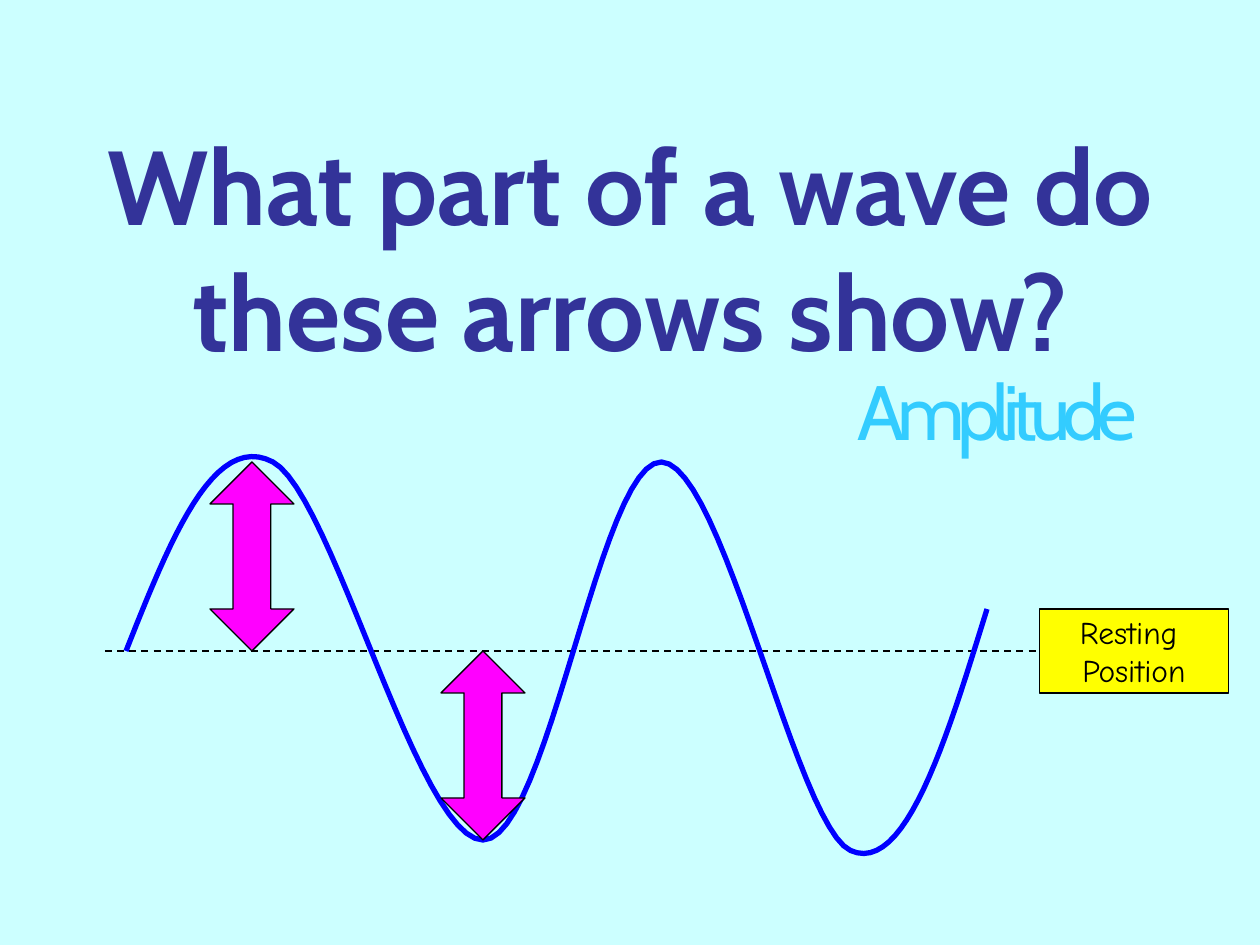
from dataclasses import dataclass, field

from lxml import etree
from pptx import Presentation
from pptx.dml.color import RGBColor
from pptx.enum.dml import MSO_LINE
from pptx.enum.shapes import MSO_CONNECTOR, MSO_SHAPE
from pptx.enum.text import MSO_ANCHOR, PP_ALIGN
from pptx.oxml.ns import qn
from pptx.util import Emu, Inches, Pt

RECTANGLE, UP_DOWN_ARROW = MSO_SHAPE.RECTANGLE, MSO_SHAPE.UP_DOWN_ARROW
STRAIGHT, DASH = MSO_CONNECTOR.STRAIGHT, MSO_LINE.DASH
TOP, MIDDLE, CENTER = MSO_ANCHOR.TOP, MSO_ANCHOR.MIDDLE, PP_ALIGN.CENTER

# The slide is a grid of 60 columns by 45 rows
COLUMNS, ROWS = 60, 45
SLIDE_WIDTH, SLIDE_HEIGHT = Inches(10), Inches(7.5)
REST_ROW = 31
CURVE_STEPS = 24
Point = tuple[float, float]


@dataclass
class Box:
    column: float
    row: float
    columns: float
    rows: float

    def place(self) -> tuple[Emu, Emu, Emu, Emu]:
        return x(self.column), y(self.row), x(self.columns), y(self.rows)


@dataclass
class Label:
    lines: list[str]
    font: dict
    color: str
    frame: dict = field(default_factory=dict)


TITLE = Label(["What part of a wave do these arrows show?"],
              {"name": "Cabin", "size": Pt(60), "bold": True}, "333399",
              {"word_wrap": True, "vertical_anchor": MIDDLE})
ANSWER = Label(["Amplitude"], {"name": "Cabin", "size": Pt(44)}, "33CCFF",
               {"word_wrap": False, "vertical_anchor": TOP})
REST = Label(["Resting ", "Position"], {"name": "Comic Neue", "size": Pt(18)},
             "000000", {"word_wrap": False, "vertical_anchor": MIDDLE})

WAVE_KNOTS = [(6, REST_ROW), (13, 22), (23, 40), (31.5, 22), (40.5, 40.5), (47, 29)]
AMPLITUDE_ARROWS = [Box(10, REST_ROW - 9, 4, 9), Box(21, REST_ROW, 4, 9)]


def x(columns: float) -> Emu:
    return Emu(round(SLIDE_WIDTH * columns / COLUMNS))


def y(rows: float) -> Emu:
    return Emu(round(SLIDE_HEIGHT * rows / ROWS))


def rgb(color: str) -> RGBColor:
    return RGBColor.from_string(color)


def paint(target, color: str) -> None:
    target.solid()
    target.fore_color.rgb = rgb(color)


def draw_outline(line, color: str, width: float) -> None:
    paint(line.fill, color)
    line.width = Pt(width)


def write(shape, label: Label) -> None:
    frame = shape.text_frame
    for name, value in label.frame.items():
        setattr(frame, name, value)
    frame.text = "\n".join(label.lines)
    for paragraph in frame.paragraphs:
        paragraph.alignment = CENTER
        font = paragraph.runs[0].font
        for name, value in label.font.items():
            setattr(font, name, value)
        font.color.rgb = rgb(label.color)


def add_text(slide, box: Box, label: Label):
    text = slide.shapes.add_textbox(*box.place())
    write(text, label)
    return text


def add_block(slide, kind, box: Box, fill: str):
    block = slide.shapes.add_shape(kind, *box.place())
    block.shadow.inherit = False
    paint(block.fill, fill)
    draw_outline(block.line, "000000", 0.75)
    return block


def add_rest_line(slide, start: float, end: float) -> None:
    line = slide.shapes.add_connector(STRAIGHT, x(start), y(REST_ROW), x(end), y(REST_ROW))
    draw_outline(line.line, "000000", 1)
    line.line.dash_style = DASH
    etree.SubElement(line._element.spPr, qn("a:effectLst"))


def midpoint(a: Point, b: Point) -> Point:
    return (a[0] + b[0]) / 2, (a[1] + b[1]) / 2


def wave_points(knots: list[Point]) -> list[Point]:
    """Smooth curve whose tangent at a knot is parallel to its neighbours' chord."""
    tangents = [((c[0] - a[0]) / 6, (c[1] - a[1]) / 6) for a, c in zip(knots, knots[2:])]
    inner = knots[1:-1]
    arriving = [(k[0] - t[0], k[1] - t[1]) for k, t in zip(inner, tangents)]
    leaving = [(k[0] + t[0], k[1] + t[1]) for k, t in zip(inner, tangents)]
    leaving.insert(0, midpoint(knots[0], arriving[0]))
    arriving.append(midpoint(leaving[-1], knots[-1]))
    points = [knots[0]]
    for curve in zip(knots, leaving, arriving, knots[1:]):
        for step in range(1, CURVE_STEPS + 1):
            t = step / CURVE_STEPS
            weights = ((1 - t) ** 3, 3 * t * (1 - t) ** 2, 3 * t * t * (1 - t), t ** 3)
            points.append(tuple(sum(w * p[axis] for w, p in zip(weights, curve))
                                for axis in (0, 1)))
    return points


def add_wave(slide) -> None:
    start, *rest = [(x(column), y(row)) for column, row in wave_points(WAVE_KNOTS)]
    builder = slide.shapes.build_freeform(*start)
    builder.add_line_segments(rest, close=False)
    wave = builder.convert_to_shape()
    wave.shadow.inherit = False
    wave.fill.background()
    draw_outline(wave.line, "0000FF", 3)


def main() -> None:
    deck = Presentation()
    deck.slide_width, deck.slide_height = SLIDE_WIDTH, SLIDE_HEIGHT
    slide = deck.slides.add_slide(deck.slide_layouts[6])
    paint(slide.background.fill, "CCFFFF")

    # Question
    add_text(slide, Box(3, 8, 54, 7.5), TITLE)

    # Wave around its resting position
    add_rest_line(slide, 5, 49.5)
    add_wave(slide)
    write(add_block(slide, RECTANGLE, Box(49.5, 29, 9, 4), "FFFF00"), REST)

    # Arrows from rest to crest and trough
    for box in AMPLITUDE_ARROWS:
        arrow = add_block(slide, UP_DOWN_ARROW, box, "FF00FF")
        arrow.adjustments[0], arrow.adjustments[1] = 0.5, 0.45

    # Answer, tightly spaced
    answer = add_text(slide, Box(36.5, 17, 22, 11), ANSWER)
    answer.text_frame.paragraphs[0].runs[0].font._element.set("spc", "-440")

    deck.save("out.pptx")


if __name__ == "__main__":
    main()
